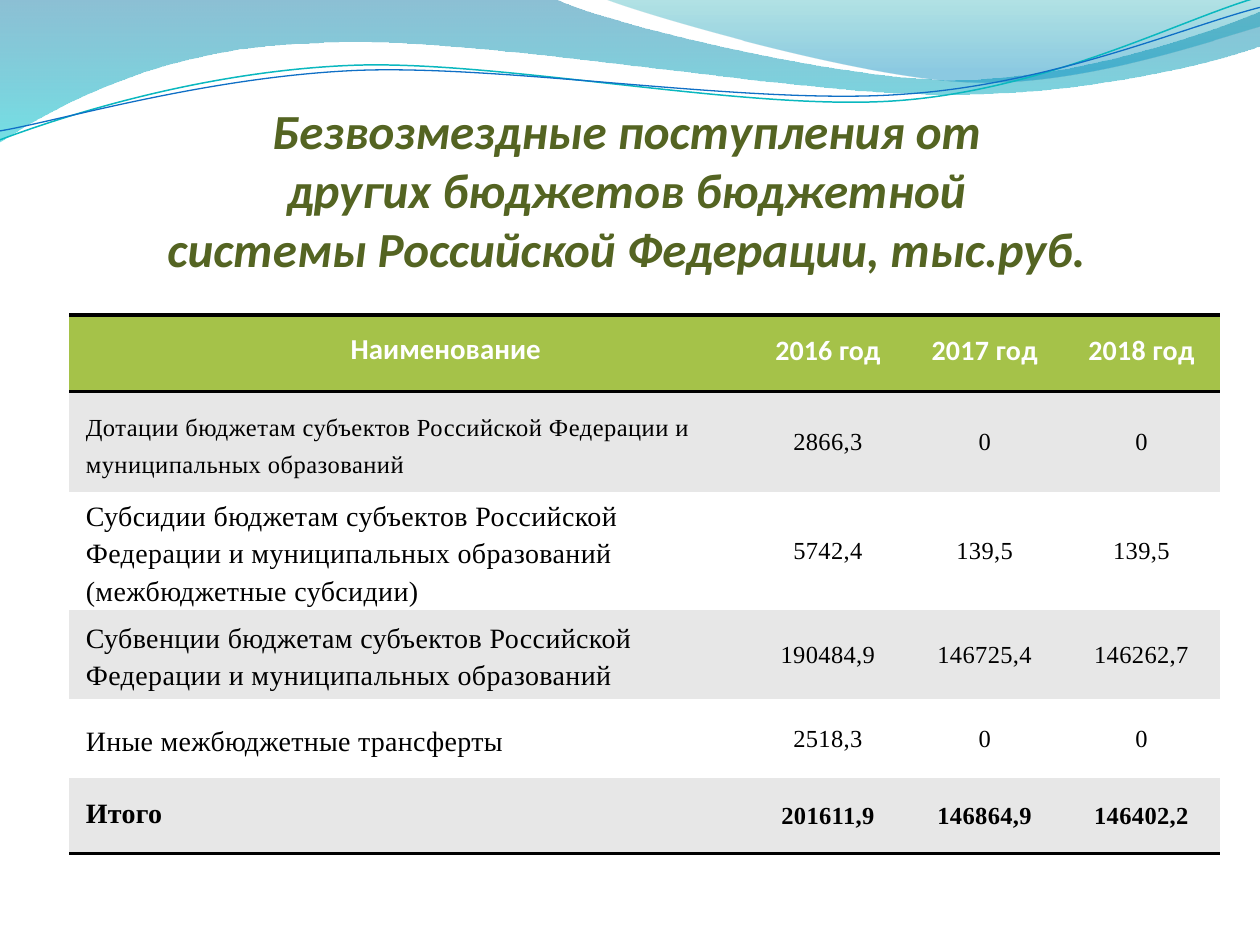
"""Build a slide with a budget transfers table under a wave header."""
from lxml import etree
from pptx import Presentation
from pptx.dml.color import RGBColor
from pptx.enum.text import MSO_ANCHOR, PP_ALIGN
from pptx.oxml.ns import qn
from pptx.util import Cm, Pt

CENTER, LEFT = PP_ALIGN.CENTER, PP_ALIGN.LEFT
MIDDLE, BOTTOM = MSO_ANCHOR.MIDDLE, MSO_ANCHOR.BOTTOM
NO_STYLE = "{2D5ABB26-0587-4C30-8999-92F81FD0307C}"
SANS, SERIF = "Calibri", "Times New Roman"

TITLE = ["Безвозмездные поступления от", "других бюджетов бюджетной",
         "системы Российской Федерации, тыс.руб."]
ROWS = [
    ("Наименование", "2016 год", "2017 год", "2018 год"),
    ("Дотации бюджетам субъектов Российской Федерации и муниципальных образований",
     "2866,3", "0", "0"),
    ("Субсидии бюджетам субъектов Российской Федерации и муниципальных образований "
     "(межбюджетные субсидии)", "5742,4", "139,5", "139,5"),
    ("Субвенции бюджетам субъектов Российской Федерации и муниципальных образований",
     "190484,9", "146725,4", "146262,7"),
    ("Иные межбюджетные трансферты", "2518,3", "0", "0"),
    ("Итого", "201611,9", "146864,9", "146402,2"),
]
COL_WIDTHS = [13.71, 3.16, 3.16, 3.16]
ROW_HEIGHTS = [1.54, 2.03, 2.38, 1.79, 1.6, 1.52]
NAME_SIZES = [16.5, 14, 16, 16, 16, 16]
NAME_SPACING = [16.5, 21.4, 21.6, 21.4, 21.4, 16]
NAME_TRACKING = [5, 25, 25, 25, 20, 20]

WAVES = [
    ([[(0, 0)], [(11.18, -0.03)],
      [(12.09, 0.43), (16.87, 1.6), (19.25, 1.6)],
      [(21.67, 1.6), (24.33, 0.66), (25.4, 0.23)], [(25.43, 0.91)],
      [(24.97, 1.12), (22.1, 1.93), (18.95, 1.9)],
      [(15.8, 1.9), (9.7, 0.71), (6.53, 0.86)],
      [(3.28, 0.91), (1.17, 2.11), (-0.03, 2.87)], [(0, 0)]],
     [(0, "0074A1", 45), (1, "00C6CF", 55)]),
    ([[(12.17, -0.03)],
      [(12.93, 0.28), (17.32, 1.57), (19.53, 1.65)],
      [(21.74, 1.75), (24.41, 0.81), (25.4, 0.53)], [(25.4, 0)], [(12.17, -0.03)]],
     [(0, "00A1A9", 30), (0.8, "008BBF", 45)]),
]
STROKES = [
    ([[(0, 2.82)],
      [(1.22, 2.36), (4.01, 1.45), (7.04, 1.32)],
      [(10.03, 1.19), (15.06, 2.26), (18.11, 2.03)],
      [(21.16, 1.8), (23.83, 0.38), (25.35, -0.05)]], "0AB8BF", 0.85),
    ([[(0, 2.64)],
      [(1.19, 2.44), (4.17, 1.55), (7.19, 1.42)],
      [(10.24, 1.3), (15.16, 2.13), (18.21, 1.9)],
      [(21.23, 1.7), (23.9, 0.53), (25.4, 0.15)]], "0F6FC6", 0.75),
]


def rgb(value):
    return RGBColor.from_string(value)


def add_path(slide, segments, close):
    points = [(Cm(x), Cm(y)) for seg in segments for x, y in seg]
    builder = slide.shapes.build_freeform(*points[0], scale=1.0)
    builder.add_line_segments(points[1:], close=close)
    sp = builder.convert_to_shape()
    sp.shadow.inherit = False
    lines = iter(list(sp._element.iter(qn("a:lnTo"))))
    for seg in segments[1:]:
        first, *rest = [next(lines) for _ in seg]
        if rest:
            curve = etree.Element(qn("a:cubicBezTo"))
            first.addprevious(curve)
            for line in (first, *rest):
                curve.append(line[0])
                line.getparent().remove(line)
    return sp


def add_wave(slide, segments, stops):
    sp = add_path(slide, segments, True)
    sp.line.fill.background()
    sp.fill.gradient()
    sp.fill.gradient_angle = 270
    for stop, (position, color, _) in zip(sp.fill.gradient_stops, stops):
        stop.position = position
        stop.color.rgb = rgb(color)
    colors = sp._element.spPr.iter(qn("a:srgbClr"))
    for clr, (_, _, opacity) in zip(list(colors), stops):
        etree.SubElement(clr, qn("a:alpha")).set("val", str(opacity * 1000))


def add_stroke(slide, segments, color, width):
    sp = add_path(slide, segments, False)
    sp.fill.background()
    sp.line.color.rgb = rgb(color)
    sp.line.width = Pt(width)


def add_run(p, text, size, font, color, bold, italic=False):
    r = p.add_run()
    r.text = text
    r.font.size, r.font.name = Pt(size), font
    r.font.bold, r.font.italic = bold, italic
    r.font.color.rgb = rgb(color)
    return r


def add_title(slide):
    tf = slide.shapes.add_textbox(Cm(1.2), Cm(1.2), Cm(22.86), Cm(4.39)).text_frame
    tf.word_wrap = True
    tf.vertical_anchor = BOTTOM
    tf.margin_left = tf.margin_right = tf.margin_bottom = 0
    tf.margin_top = Cm(0.13)
    p = tf.paragraphs[0]
    p.alignment = CENTER
    for i, line in enumerate(TITLE):
        if i:
            p.add_line_break()
        add_run(p, line, 28, SANS, "546422", True, True)


def add_border(cell, side):
    ln = etree.SubElement(cell._tc.get_or_add_tcPr(), qn("a:" + side), w=str(Pt(2)))
    fill = etree.SubElement(ln, qn("a:solidFill"))
    etree.SubElement(fill, qn("a:srgbClr"), val="000000")


def fill_cell(cell, text, row, col):
    header, total = row == 0, row == len(ROWS) - 1
    if header:
        add_border(cell, "lnT")
    if header or total:
        add_border(cell, "lnB")
    cell.fill.solid()
    cell.fill.fore_color.rgb = rgb("A5C249" if header else "E7E7E7" if row % 2 else "FFFFFF")
    cell.margin_left = cell.margin_right = Cm(0.03)
    cell.margin_top = cell.margin_bottom = 0
    cell.vertical_anchor = MIDDLE
    p = cell.text_frame.paragraphs[0]
    if col == 0:
        p.alignment = LEFT
        p._p.get_or_add_pPr().set("marL", str(Cm(5.64 if header else 0.3)))
        size, spacing, tracking = NAME_SIZES[row], NAME_SPACING[row], NAME_TRACKING[row]
    else:
        p.alignment = CENTER
        size, spacing = (16, 16.5) if header else (14, 16)
        tracking = 10 if header and col == 1 else 20
    p.line_spacing = Pt(spacing)
    r = add_run(p, text, size, SANS if header else SERIF,
                "FFFFFF" if header else "000000", header or total)
    r._r.get_or_add_rPr().set("spc", str(tracking))


def add_budget_table(slide):
    frame = slide.shapes.add_table(len(ROWS), len(COL_WIDTHS), Cm(1.4), Cm(6.35),
                                   Cm(sum(COL_WIDTHS)), Cm(sum(ROW_HEIGHTS)))
    table = frame.table
    table.first_row = table.horz_banding = False
    table._tbl.tblPr.find(qn("a:tableStyleId")).text = NO_STYLE
    for column, width in zip(table.columns, COL_WIDTHS):
        column.width = Cm(width)
    for i, (height, texts) in enumerate(zip(ROW_HEIGHTS, ROWS)):
        table.rows[i].height = Cm(height)
        for j, text in enumerate(texts):
            fill_cell(table.cell(i, j), text, i, j)


def main():
    prs = Presentation()
    prs.slide_width, prs.slide_height = Cm(25.4), Cm(19.05)
    slide = prs.slides.add_slide(prs.slide_layouts[6])
    for wave in WAVES:
        add_wave(slide, *wave)
    for stroke in STROKES:
        add_stroke(slide, *stroke)
    add_title(slide)
    add_budget_table(slide)
    prs.save("out.pptx")


if __name__ == "__main__":
    main()
